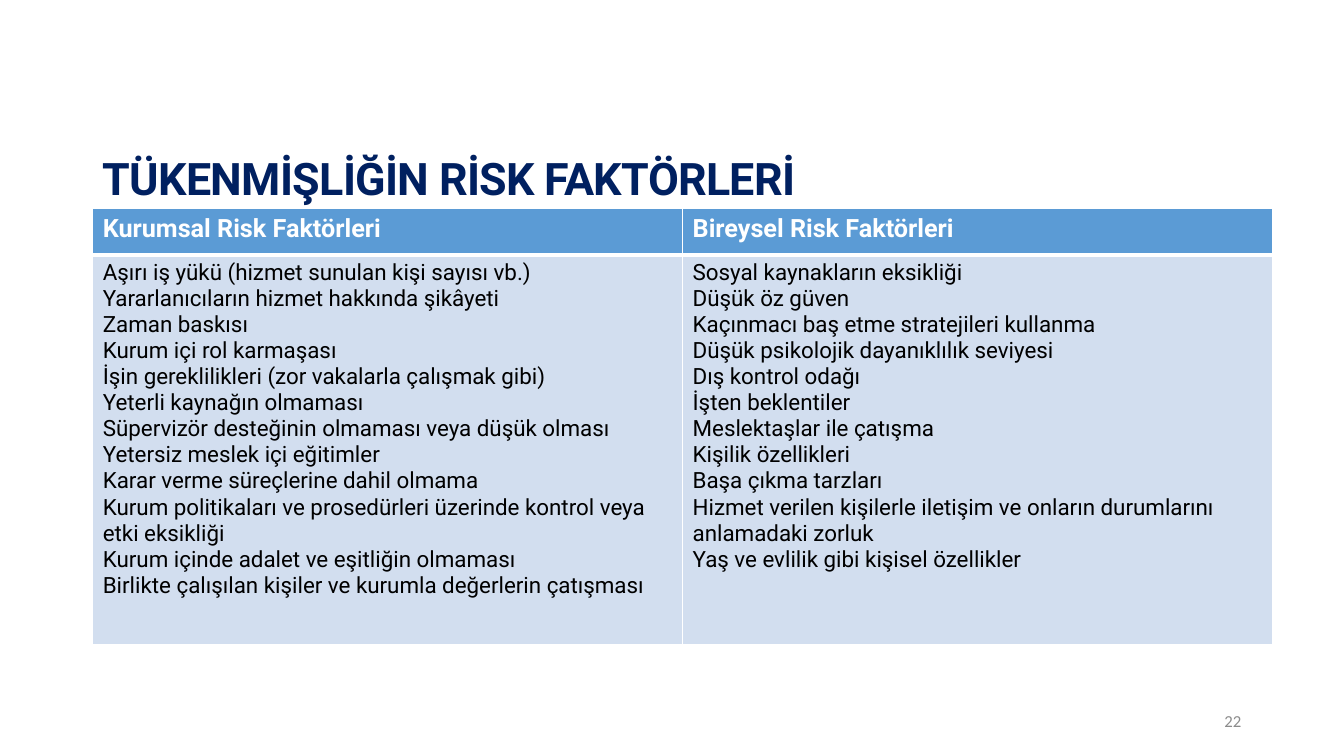
import pptx
import pptx.util
import pptx.dml.color
import pptx.enum.text
from dataclasses import dataclass
from lxml import etree

TITLE = "TÜKENMİŞLİĞİN RİSK FAKTÖRLERİ"
PAGE = "22"
FACTORS = {
    "Kurumsal Risk Faktörleri": [
        "Aşırı iş yükü (hizmet sunulan kişi sayısı vb.)",
        "Yararlanıcıların hizmet hakkında şikâyeti",
        "Zaman baskısı",
        "Kurum içi rol karmaşası",
        "İşin gereklilikleri (zor vakalarla çalışmak gibi)",
        "Yeterli kaynağın olmaması",
        "Süpervizör desteğinin olmaması veya düşük olması",
        "Yetersiz meslek içi eğitimler",
        "Karar verme süreçlerine dahil olmama",
        "Kurum politikaları ve prosedürleri üzerinde kontrol veya etki eksikliği",
        "Kurum içinde adalet ve eşitliğin olmaması",
        "Birlikte çalışılan kişiler ve kurumla değerlerin çatışması",
    ],
    "Bireysel Risk Faktörleri": [
        "Sosyal kaynakların eksikliği",
        "Düşük öz güven",
        "Kaçınmacı baş etme stratejileri kullanma",
        "Düşük psikolojik dayanıklılık seviyesi",
        "Dış kontrol odağı",
        "İşten beklentiler",
        "Meslektaşlar ile çatışma",
        "Kişilik özellikleri",
        "Başa çıkma tarzları",
        "Hizmet verilen kişilerle iletişim ve onların durumlarını anlamadaki zorluk",
        "Yaş ve evlilik gibi kişisel özellikler",
    ],
}


@dataclass(frozen=True)
class Theme:
    font: str = "Roboto"
    page_font: str = "Calibri"
    navy: str = "002060"
    header: str = "5B9BD5"
    body: str = "D2DEEF"
    white: str = "FFFFFF"
    black: str = "000000"
    grey: str = "8C8C8C"
    title_size: int = 32
    header_size: int = 18
    body_size: int = 16
    page_size: int = 12


T = Theme()
WIDTH, HEIGHT = 13.33, 7.5
MARGIN = 0.92
CONTENT_WIDTH = WIDTH - 2 * MARGIN
TABLE_TOP, COL_WIDTH = 2.07, 5.85
HEADER_HEIGHT, BODY_HEIGHT = 0.46, 3.87
PAGE_WIDTH = 3
inch = pptx.util.Inches


def rgb(value):
    return pptx.dml.color.RGBColor.from_string(value)


def write(tf, lines, size, color, font=T.font, bold=False, spacing=None, line=None, align=None):
    """Put one paragraph per line in the frame; spacing is in hundredths of a point."""
    tf.word_wrap = True
    for i, text in enumerate(lines):
        p = tf.add_paragraph() if i else tf.paragraphs[0]
        p.line_spacing, p.alignment = line, align
        r = p.add_run()
        r.text = text
        r.font.name, r.font.size, r.font.bold = font, pptx.util.Pt(size), bold
        r.font.color.rgb = rgb(color)
        if spacing is not None:
            r._r.get_or_add_rPr().set("spc", str(spacing))


def add_label(s, left, top, width, height, text, **fmt):
    tf = s.shapes.add_textbox(*map(inch, (left, top, width, height))).text_frame
    tf.vertical_anchor = pptx.enum.text.MSO_ANCHOR.MIDDLE
    write(tf, [text], **fmt)


def style_cell(cell, fill, bottom):
    """Set white borders, the bottom one in its own width, then the fill."""
    ns = "{http://schemas.openxmlformats.org/drawingml/2006/main}"
    tcPr = cell._tc.get_or_add_tcPr()
    for side in "LRTB":
        width = bottom if side == "B" else 1
        ln = etree.SubElement(tcPr, f"{ns}ln{side}", w=str(pptx.util.Pt(width)))
        solid = etree.SubElement(ln, f"{ns}solidFill")
        etree.SubElement(solid, f"{ns}srgbClr", val=T.white)
    cell.fill.solid()
    cell.fill.fore_color.rgb = rgb(fill)


def add_factor_table(s):
    cols = len(FACTORS)
    table = s.shapes.add_table(
        2, cols, inch(MARGIN), inch(TABLE_TOP),
        inch(cols * COL_WIDTH), inch(HEADER_HEIGHT + BODY_HEIGHT)).table
    for row, height in zip(table.rows, (HEADER_HEIGHT, BODY_HEIGHT)):
        row.height = inch(height)
    for c, (heading, factors) in enumerate(FACTORS.items()):
        table.columns[c].width = inch(COL_WIDTH)
        head, body = table.cell(0, c), table.cell(1, c)
        style_cell(head, T.header, bottom=3)
        write(head.text_frame, [heading], T.header_size, T.white, bold=True)
        style_cell(body, T.body, bottom=1)
        write(body.text_frame, factors, T.body_size, T.black)
    for cell in (table.cell(1, c) for c in range(cols)):
        top = cell._tc.tcPr.find("{*}lnT")
        top.set("w", str(pptx.util.Pt(3)))


def main():
    prs = pptx.Presentation()
    prs.slide_width, prs.slide_height = inch(WIDTH), inch(HEIGHT)
    s = prs.slides.add_slide(prs.slide_layouts[6])
    add_label(s, MARGIN, 1.07, CONTENT_WIDTH, 1.45, TITLE, size=T.title_size,
              color=T.navy, bold=True, spacing=-50, line=0.9)
    add_factor_table(s)
    add_label(s, WIDTH - MARGIN - PAGE_WIDTH, 6.95, PAGE_WIDTH, 0.4, PAGE,
              size=T.page_size, color=T.grey, font=T.page_font,
              align=pptx.enum.text.PP_ALIGN.RIGHT)
    prs.save("out.pptx")


if __name__ == "__main__":
    main()
